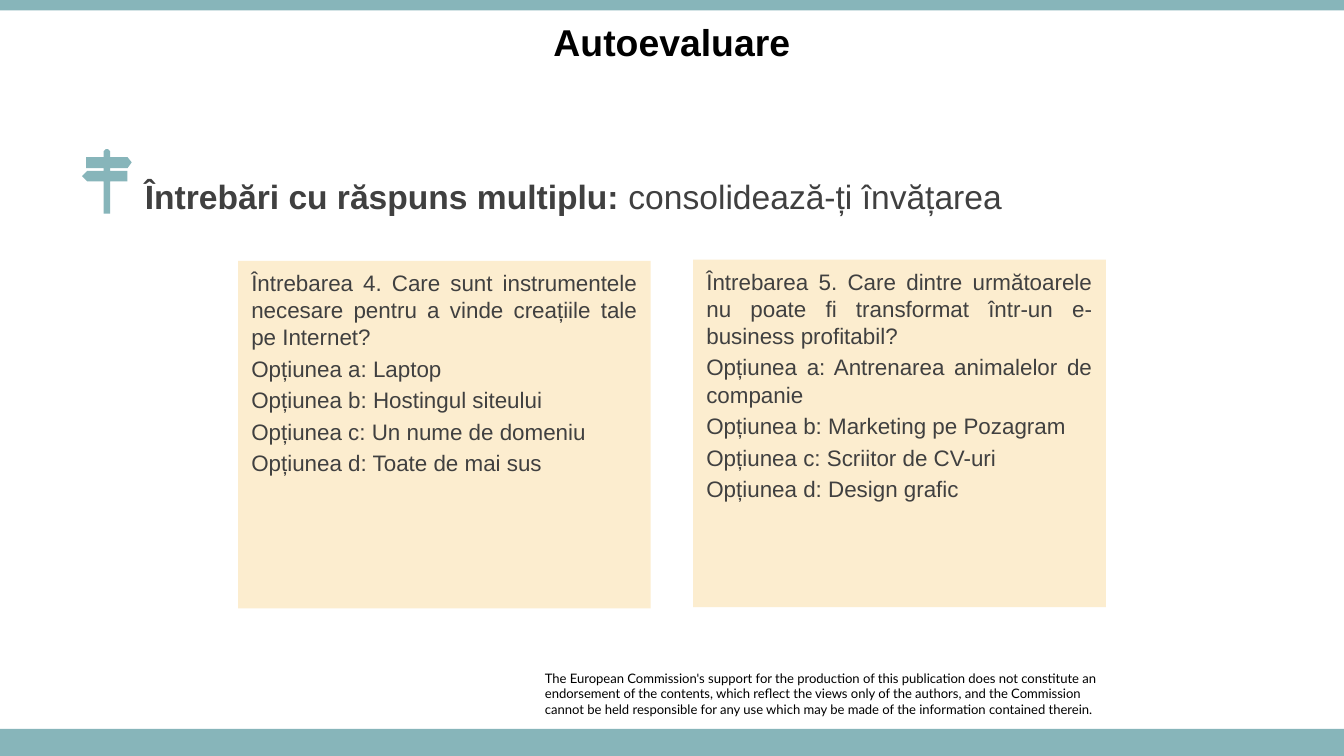
"""Build the self-assessment slide with two multiple-choice question cards."""
import math
from dataclasses import dataclass

from pptx import Presentation
from pptx import util as u
from pptx.dml.color import RGBColor
from pptx.enum import shapes, text


@dataclass(frozen=True)
class Theme:
    """Hold the colours, fonts and type sizes of the slide."""
    teal: str = "87B5BA"
    cream: str = "FCEDCF"
    black: str = "000000"
    grey: str = "404040"
    font: str = "Arial"
    note_font: str = "Lato"
    title: float = 20
    heading: float = 18
    body: float = 12
    body_line: float = 14.5
    note: float = 7


THEME = Theme()
CARDS = [
    (4.5, 4.93, [
        "Întrebarea 4. Care sunt instrumentele necesare pentru a vinde creațiile tale pe Internet?",
        "Opțiunea a: Laptop",
        "Opțiunea b: Hostingul siteului",
        "Opțiunea c: Un nume de domeniu",
        "Opțiunea d: Toate de mai sus",
    ]),
    (13.1, 4.91, [
        "Întrebarea 5. Care dintre următoarele nu poate fi transformat într-un e-business profitabil?",
        "Opțiunea a: Antrenarea animalelor de companie",
        "Opțiunea b: Marketing pe Pozagram",
        "Opțiunea c: Scriitor de CV-uri",
        "Opțiunea d: Design grafic",
    ]),
]
NOTE = [
    "The European Commission's support for the production of this publication does not constitute an "
    "endorsement of the contents, which reflect the views only of the authors, and the Commission",
    "cannot be held responsible for any use which may be made of the information contained therein.",
]


def paint(sp, color):
    """Give a shape a flat fill without line or shadow."""
    sp.shadow.inherit = False
    sp.fill.solid()
    sp.fill.fore_color.rgb = RGBColor.from_string(color)
    sp.line.fill.background()


def add_rect(s, left, top, width, height, color):
    """Add a flat rectangle measured in centimetres."""
    sp = s.shapes.add_shape(shapes.MSO_SHAPE.RECTANGLE,
                            *map(u.Cm, (left, top, width, height)))
    paint(sp, color)
    return sp


def add_box(s, left, top, width, height):
    """Add an empty text box measured in centimetres."""
    return s.shapes.add_textbox(*map(u.Cm, (left, top, width, height)))


def write(sp, paragraphs, *, size, color, font=THEME.font, align=text.PP_ALIGN.LEFT,
          anchor=text.MSO_ANCHOR.TOP, insets=(0.25, 0.13, 0.25, 0.13), gap=0, line=None):
    """Write paragraphs, each a list of (text, bold) runs, with one format."""
    tf = sp.text_frame
    tf.word_wrap = True
    tf.vertical_anchor = anchor
    tf.margin_left, tf.margin_top, tf.margin_right, tf.margin_bottom = map(u.Cm, insets)
    for i, runs in enumerate(paragraphs):
        p = tf.add_paragraph() if i else tf.paragraphs[0]
        p.alignment = align
        p.space_before = u.Pt(gap if i else 0)
        if line:
            p.line_spacing = u.Pt(line)
        for words, bold in runs:
            r = p.add_run()
            r.text = words
            r.font.name = font
            r.font.size = u.Pt(size)
            r.font.bold = bold
            r.font.color.rgb = RGBColor.from_string(color)


def plain(lines):
    """Turn lines into paragraphs of one regular run."""
    return [[(words, False)] for words in lines]


def add_signpost(s):
    """Draw the signpost icon with points in hundredths of a centimetre."""
    x, half, top = 202, 6, 282
    cap = [(x + half * math.cos(a), top + half - half * math.sin(a))
           for a in (math.pi * i / 8 for i in range(9))]
    left = [(x - half, 297), (163, 297), (163, 318), (x - half, 318), (x - half, 323),
            (165, 323), (155, 333), (165, 343), (x - half, 343), (x - half, 404)]
    right = [(x + half, 404), (x + half, 343), (241, 343), (241, 323), (x + half, 323),
             (x + half, 318), (241, 318), (249, 307), (241, 297), (x + half, 297)]
    fb = s.shapes.build_freeform(*cap[0], scale=u.Cm(0.01))
    fb.add_line_segments(cap[1:] + left + right)
    paint(fb.convert_to_shape(), THEME.teal)


def add_card(s, left, top, lines):
    """Add one question card with its options."""
    sp = add_rect(s, left, top, 7.8, 6.57, THEME.cream)
    write(sp, plain(lines), size=THEME.body, color=THEME.grey, align=text.PP_ALIGN.JUSTIFY,
          insets=(0.25, 0.15, 0.25, 0.13), gap=2.4, line=THEME.body_line)


def main():
    """Build and save the slide."""
    prs = Presentation()
    prs.slide_width, prs.slide_height = u.Cm(25.4), u.Cm(14.29)
    s = prs.slides.add_slide(prs.slide_layouts[6])
    write(add_box(s, 10.3, 12.67, 10.6, 0.9), plain(NOTE), size=THEME.note,
          color=THEME.black, font=THEME.note_font, insets=(0, 0, 0, 0))
    add_rect(s, 0, 13.78, 25.4, 0.51, THEME.teal)
    add_rect(s, 0, 0, 25.4, 0.2, THEME.teal)
    write(add_box(s, 0, 0.36, 25.4, 1.6), [[("Autoevaluare", True)]], size=THEME.title,
          color=THEME.black, align=text.PP_ALIGN.CENTER, insets=(0.25, 0, 0.25, 0))
    write(add_box(s, 2.49, 3.3, 17, 0.8),
          [[("Întrebări cu răspuns multiplu: ", True), ("consolidează-ți învățarea", False)]],
          size=THEME.heading, color=THEME.grey, anchor=text.MSO_ANCHOR.MIDDLE)
    add_signpost(s)
    for card in CARDS:
        add_card(s, *card)
    prs.save("out.pptx")


if __name__ == "__main__":
    main()
